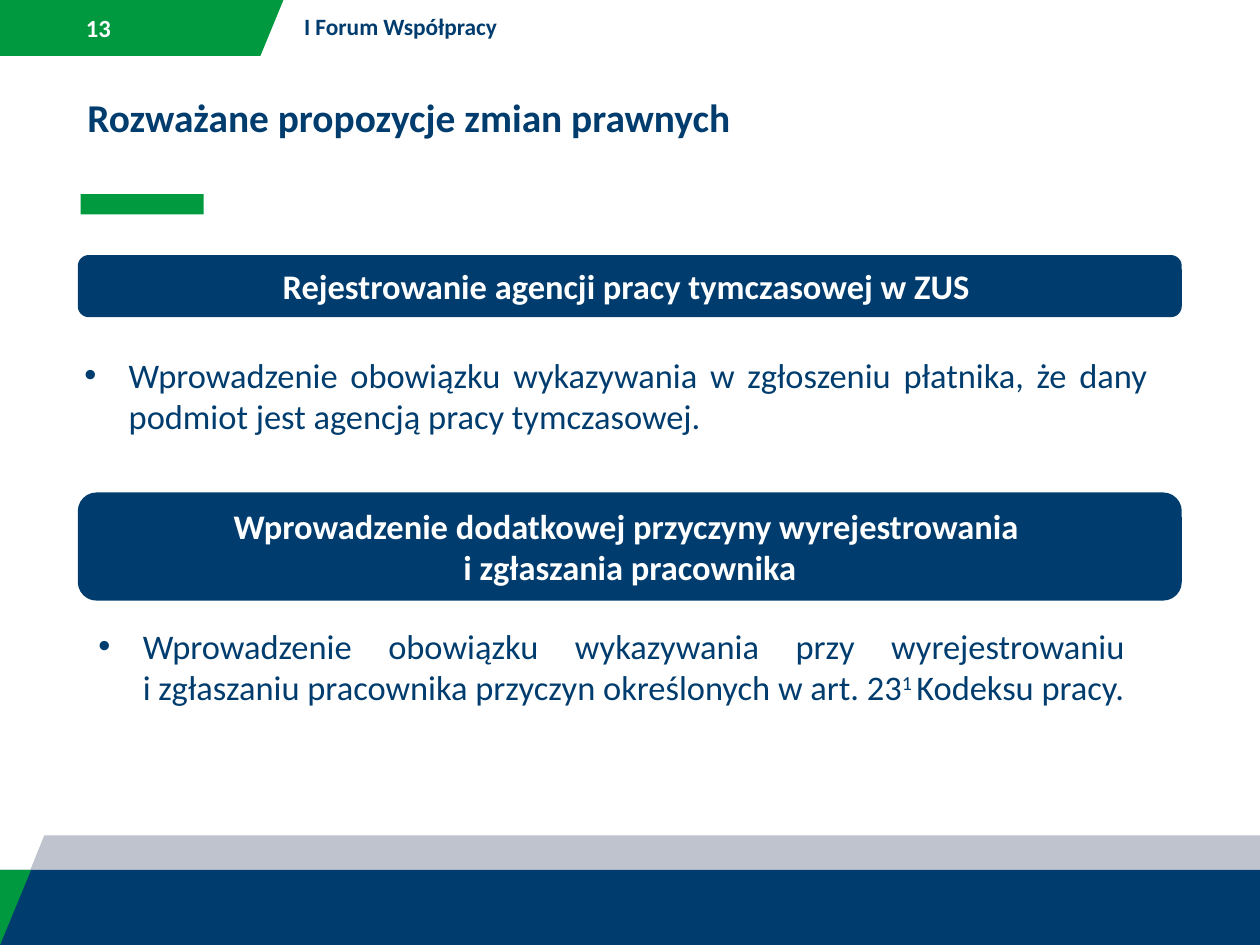
from dataclasses import dataclass, field
from lxml.etree import SubElement
from pptx import Presentation
from pptx.dml.color import RGBColor as Rgb
from pptx.enum.shapes import MSO_SHAPE as Kind
from pptx.enum.text import MSO_ANCHOR as Anchor, PP_ALIGN as Align
from pptx.oxml.ns import qn
from pptx.util import Pt

NAVY, GREEN, GRAY, WHITE = "003D6E", "00993F", "BEC3CE", "FFFFFF"
WIDE, HIGH = 1024, 768
LEFT, SPAN = 64, 895.7


@dataclass
class Poly:
    points: list[tuple[float, float]]
    fill: str


@dataclass
class Box:
    at: tuple[float, float, float, float]
    text: str = ""
    size: float = 28
    color: str = NAVY
    bold: bool = False
    fill: str = ""
    edge: bool = False
    kind: Kind | None = None
    inset: tuple[float, float] = (7.2, 3.6)
    anchor: Anchor = Anchor.TOP
    bullet: bool = False
    para: dict = field(default_factory=dict)


def paint(part, color: str) -> None:
    if color:
        part.solid()
        part.fore_color.rgb = Rgb.from_string(color)
    else:
        part.background()


def draw_poly(slide, poly: Poly) -> None:
    spots = [(Pt(x), Pt(y)) for x, y in poly.points]
    form = slide.shapes.build_freeform(*spots[0], scale=1.0)
    form.add_line_segments(spots[1:], close=True)
    shape = form.convert_to_shape()
    shape.shadow.inherit = False
    paint(shape.fill, poly.fill)
    paint(shape.line.fill, "")


def add_bullet(para) -> None:
    props = para._p.get_or_add_pPr()
    props.set("marL", str(Pt(36)))
    props.set("indent", str(-Pt(36)))
    SubElement(props, qn("a:buFont")).set("typeface", "Arial")
    SubElement(props, qn("a:buChar")).set("char", "•")


def add_run(para, text: str, box: Box, raised: bool) -> None:
    run = para.add_run()
    run.text = text
    style = {"name": "Calibri", "size": Pt(box.size), "bold": box.bold}
    for key, value in style.items():
        setattr(run.font, key, value)
    paint(run.font.fill, box.color)
    if raised:
        run._r.get_or_add_rPr().set("baseline", "30000")


def write(shape, box: Box) -> None:
    frame = shape.text_frame
    side, edge = (Pt(n) for n in box.inset)
    style = {"word_wrap": True, "vertical_anchor": box.anchor,
             "margin_left": side, "margin_right": side,
             "margin_top": edge, "margin_bottom": edge}
    for key, value in style.items():
        setattr(frame, key, value)
    para = frame.paragraphs[0]
    if box.bullet:
        add_bullet(para)
    for key, value in ({"alignment": Align.LEFT} | box.para).items():
        setattr(para, key, value)
    for row, line in enumerate(box.text.split("\n")):
        if row:
            para.add_line_break()
        for part, text in enumerate(line.split("^")):
            add_run(para, text, box, part % 2 == 1)


def draw_box(slide, box: Box) -> None:
    spot = [Pt(n) for n in box.at]
    if box.kind is None:
        shape = slide.shapes.add_textbox(*spot)
    else:
        shape = slide.shapes.add_shape(box.kind, *spot)
        shape.shadow.inherit = False
        paint(shape.fill, box.fill)
        paint(shape.line.fill, box.fill if box.edge else "")
        if box.edge:
            shape.line.width = Pt(1.5)
    if box.text:
        write(shape, box)


def banner(top: float, high: float, text: str) -> Box:
    return Box((LEFT, top, SPAN, high), text, color=WHITE, bold=True,
               fill=NAVY, edge=True, kind=Kind.ROUNDED_RECTANGLE,
               inset=(10, 5), para={"alignment": Align.CENTER})


def point(left: float, top: float, text: str) -> Box:
    return Box((left, top, SPAN, 123.8), text, kind=Kind.ROUNDED_RECTANGLE,
               inset=(10, 5), bullet=True, para={"alignment": Align.JUSTIFY})


ITEMS = [
    Poly([(230.4, 0), (211.7, 45.4), (0, 45.4), (0, 0)], GREEN),
    Poly([(0, HIGH), (36, 679), (WIDE, 679), (WIDE, HIGH)], GRAY),
    Box((0, 707, WIDE, HIGH - 707), fill=NAVY, kind=Kind.RECTANGLE),
    Poly([(0, 707), (0, HIGH), (25.2, 707)], GREEN),
    Box((65.5, 157.7, 100, 16.6), fill="029A3F", kind=Kind.RECTANGLE),
    Box((65.5, 6.5, 61.2, 32.4), "13", 20, WHITE, True,
        inset=(4.3, 4.3), anchor=Anchor.MIDDLE),
    Box((LEFT, 72, 956, 85), "Rozważane propozycje zmian prawnych", 32,
        bold=True),
    point(52.6, 276.5, "Wprowadzenie obowiązku wykazywania w zgłoszeniu "
          "płatnika, że dany podmiot jest agencją pracy tymczasowej. "),
    Box((240, 6.5, 726, 30), "I Forum Współpracy", 19, bold=True,
        para={"space_after": Pt(6)}),
    banner(208, 49, "Rejestrowanie agencji pracy tymczasowej w ZUS "),
    banner(401, 86.4, "Wprowadzenie dodatkowej przyczyny wyrejestrowania \n"
           "i zgłaszania pracownika"),
    point(LEFT, 496.8, "Wprowadzenie obowiązku wykazywania przy "
          "wyrejestrowaniu \ni zgłaszaniu pracownika przyczyn określonych "
          "w art. 23^1 ^Kodeksu pracy. "),
]


def main() -> None:
    deck = Presentation()
    deck.slide_width, deck.slide_height = Pt(WIDE), Pt(HIGH)
    slide = deck.slides.add_slide(deck.slide_layouts[6])
    paint(slide.background.fill, WHITE)
    for item in ITEMS:
        if isinstance(item, Poly):
            draw_poly(slide, item)
        else:
            draw_box(slide, item)
    deck.save("out.pptx")


if __name__ == "__main__":
    main()
